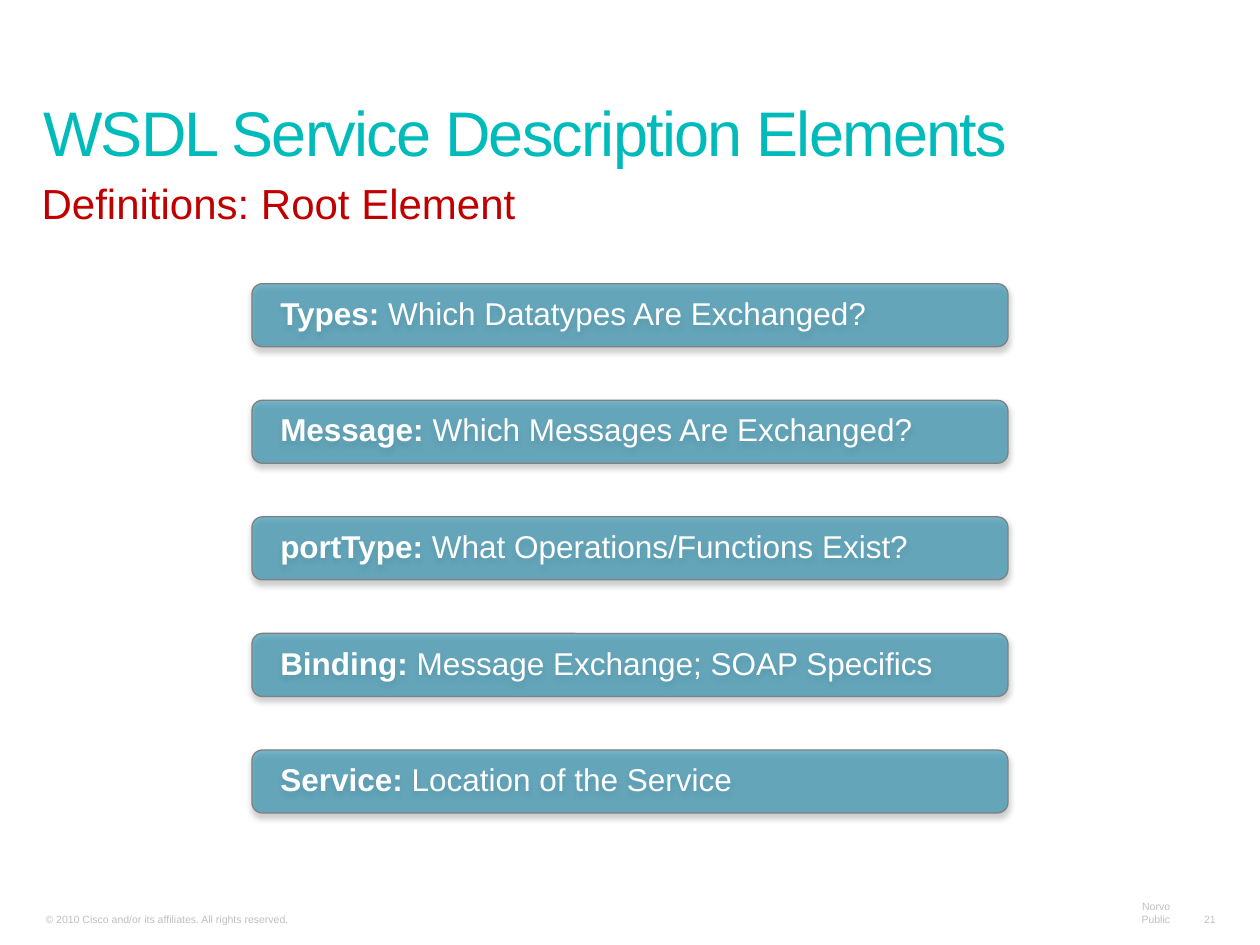
from dataclasses import dataclass

from lxml import etree
from pptx import Presentation
from pptx import util as u
from pptx.dml.color import RGBColor
from pptx.enum import shapes, text
from pptx.oxml import ns

COLORS = {
    "title": "01BBBB",
    "subtitle": "C00000",
    "footer": "C0C0C0",
    "bar": "1F8BAE",
    "outline": "808080",
    "bar_text": "FFFFFF",
    "shadow": "000000",
}
FONT = "Arial"
BAR_LEFT, BAR_TOP, BAR_WIDTH, BAR_HEIGHT, BAR_PITCH = 5.08, 5.72, 15.24, 1.27, 2.35


@dataclass
class Label:
    content: str
    left: float
    top: float
    width: float
    height: float
    size: float
    color: str
    anchor: text.MSO_ANCHOR = text.MSO_ANCHOR.BOTTOM
    align: text.PP_ALIGN = text.PP_ALIGN.LEFT
    line_spacing: float = 1.0
    wrap: bool = True
    margin: float = 0.11
    tracking: int = 0


@dataclass
class Element:
    name: str
    description: str


LABELS = [
    Label("© 2010 Cisco and/or its affiliates. All rights reserved.",
          0.69, 18.29, 9.5, 0.48, 6, "footer"),
    Label("Norvo Public", 22.17, 18.29, 1.65, 0.48, 6, "footer",
          align=text.PP_ALIGN.RIGHT, wrap=False),
    Label("21", 24.03, 18.29, 0.71, 0.48, 6, "footer",
          align=text.PP_ALIGN.RIGHT, wrap=False),
    Label("WSDL Service Description Elements", 0.64, 1.19, 23.85, 2.34, 36, "title",
          line_spacing=0.8, margin=0.13, tracking=-100),
    Label("Definitions: Root Element", 0.61, 3.58, 19.28, 1.52, 24, "subtitle",
          anchor=text.MSO_ANCHOR.TOP, line_spacing=0.9),
]

ELEMENTS = [
    Element("Types", "Which Datatypes Are Exchanged?"),
    Element("Message", "Which Messages Are Exchanged?"),
    Element("portType", "What Operations/Functions Exist?"),
    Element("Binding", "Message Exchange; SOAP Specifics"),
    Element("Service", "Location of the Service"),
]


def rgb(name: str) -> RGBColor:
    return RGBColor.from_string(COLORS[name])


def set_margins(tf, left: float, vertical: float) -> None:
    tf.margin_left, tf.margin_right = u.Cm(left), u.Cm(0.23)
    tf.margin_top = tf.margin_bottom = u.Cm(vertical)


def set_font(p, size: float, color: str) -> None:
    p.font.name = FONT
    p.font.size = u.Pt(size)
    p.font.color.rgb = rgb(color)


def add_alpha(color_element, percent: int) -> None:
    etree.SubElement(color_element, ns.qn("a:alpha"), val=str(percent * 1000))


def add_shadow(sp) -> None:
    effects = sp._element.spPr.find(ns.qn("a:effectLst"))
    shadow = etree.SubElement(
        effects, ns.qn("a:outerShdw"), blurRad=str(u.Pt(3.5)), dist=str(u.Pt(2.2)),
        dir="5400000", algn="t", rotWithShape="0")
    color = etree.SubElement(shadow, ns.qn("a:srgbClr"), val=COLORS["shadow"])
    add_alpha(color, 32)


def add_label(s, label: Label) -> None:
    sp = s.shapes.add_textbox(u.Cm(label.left), u.Cm(label.top),
                              u.Cm(label.width), u.Cm(label.height))
    tf = sp.text_frame
    tf.word_wrap = label.wrap
    tf.vertical_anchor = label.anchor
    set_margins(tf, 0.23, label.margin)
    p = tf.paragraphs[0]
    p.alignment = label.align
    p.line_spacing = label.line_spacing
    set_font(p, label.size, label.color)
    r = p.add_run()
    r.text = label.content
    if label.tracking:
        r.font._element.set("spc", str(label.tracking))


def add_bar(s, element: Element, top: float) -> None:
    sp = s.shapes.add_shape(shapes.MSO_SHAPE.ROUNDED_RECTANGLE, u.Cm(BAR_LEFT),
                            u.Cm(top), u.Cm(BAR_WIDTH), u.Cm(BAR_HEIGHT))
    sp.fill.solid()
    sp.fill.fore_color.rgb = rgb("bar")
    add_alpha(sp._element.spPr.find(ns.qn("a:solidFill"))[0], 60)
    sp.line.color.rgb = rgb("outline")
    sp.line.width = u.Pt(0.75)
    sp.shadow.inherit = False
    add_shadow(sp)
    tf = sp.text_frame
    tf.word_wrap = True
    tf.vertical_anchor = text.MSO_ANCHOR.MIDDLE
    set_margins(tf, 0.51, 0.11)
    p = tf.paragraphs[0]
    p.alignment = text.PP_ALIGN.LEFT
    p.line_spacing = 0.9
    set_font(p, 18, "bar_text")
    for content, bold in ((f"{element.name}: ", True), (element.description, False)):
        r = p.add_run()
        r.text = content
        r.font.bold = bold


def main() -> None:
    prs = Presentation()
    prs.slide_width, prs.slide_height = u.Cm(25.4), u.Cm(19.05)
    s = prs.slides.add_slide(prs.slide_layouts[6])
    for label in LABELS:
        add_label(s, label)
    for i, element in enumerate(ELEMENTS):
        add_bar(s, element, BAR_TOP + i * BAR_PITCH)
    prs.save("out.pptx")


if __name__ == "__main__":
    main()
